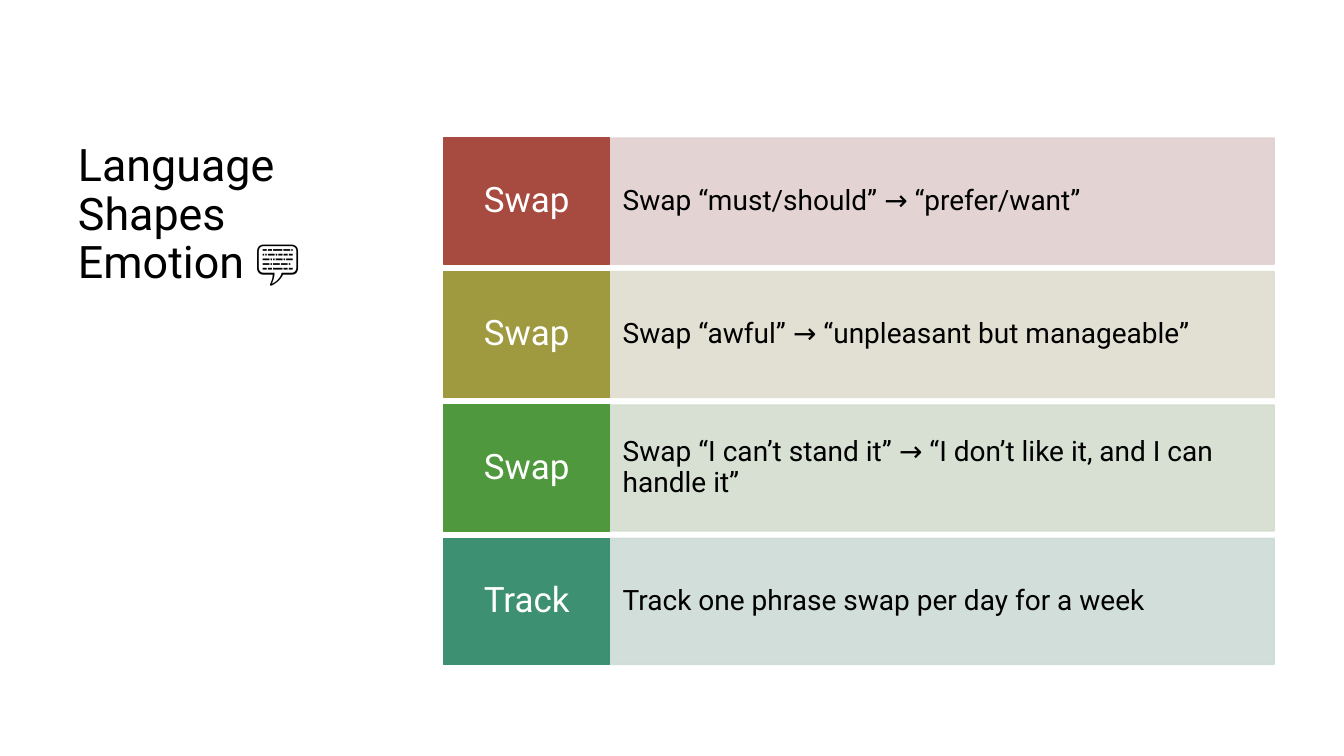
from dataclasses import dataclass

from lxml.etree import SubElement
from pptx import Presentation
from pptx.dml.color import RGBColor
from pptx.enum.shapes import MSO_SHAPE
from pptx.enum.text import MSO_ANCHOR, MSO_AUTO_SIZE, PP_ALIGN
from pptx.oxml.ns import qn
from pptx.shapes.autoshape import Shape
from pptx.slide import Slide
from pptx.util import Pt

BLACK = RGBColor(0x00, 0x00, 0x00)
WHITE = RGBColor(0xFF, 0xFF, 0xFF)
RED = RGBColor(0xA7, 0x4B, 0x40)
PALE_RED = RGBColor(0xE1, 0xD0, 0xCF)
OLIVE = RGBColor(0x9F, 0x9A, 0x3F)
PALE_OLIVE = RGBColor(0xDF, 0xDD, 0xCF)
GREEN = RGBColor(0x50, 0x98, 0x3E)
PALE_GREEN = RGBColor(0xD3, 0xDD, 0xCE)
TEAL = RGBColor(0x3D, 0x90, 0x72)
PALE_TEAL = RGBColor(0xCE, 0xDB, 0xD5)

FONT = "Roboto"
TOP = 98.64
ROW_HEIGHT = 90
ROW_PITCH = 95.3
LABEL_LEFT, LABEL_WIDTH = 316.8, 118.8
DETAIL_LEFT, DETAIL_WIDTH = LABEL_LEFT + LABEL_WIDTH, 474.5


@dataclass(frozen=True)
class Row:
    label: str
    detail: str
    strong: RGBColor
    pale: RGBColor


ROWS = [
    Row("Swap", "Swap “must/should” → “prefer/want”", RED, PALE_RED),
    Row("Swap", "Swap “awful” → “unpleasant but manageable”", OLIVE, PALE_OLIVE),
    Row("Swap", "Swap “I can’t stand it” → “I don’t like it, and I can handle it”",
        GREEN, PALE_GREEN),
    Row("Track", "Track one phrase swap per day for a week", TEAL, PALE_TEAL),
]


def write_text(box: Shape, text: str, *, size: float, color: RGBColor,
               align: PP_ALIGN = PP_ALIGN.LEFT,
               anchor: MSO_ANCHOR = MSO_ANCHOR.MIDDLE,
               inset_x: float = 7.2, inset_y: float = 3.6) -> None:
    frame = box.text_frame
    frame.word_wrap = True
    frame.auto_size = MSO_AUTO_SIZE.NONE
    frame.vertical_anchor = anchor
    frame.margin_left = frame.margin_right = Pt(inset_x)
    frame.margin_top = frame.margin_bottom = Pt(inset_y)
    para = frame.paragraphs[0]
    para.alignment = align
    para.line_spacing = 0.9
    span = para.add_run()
    span.text = text
    span.font.name = FONT
    span.font.size = Pt(size)
    span.font.color.rgb = color


def add_block(page: Slide, left: float, top: float, width: float,
              color: RGBColor, opacity: int = 100) -> Shape:
    box = page.shapes.add_shape(MSO_SHAPE.RECTANGLE, Pt(left), Pt(top),
                                Pt(width), Pt(ROW_HEIGHT))
    box.shadow.inherit = False
    box.fill.solid()
    box.fill.fore_color.rgb = color
    box.line.color.rgb = color
    box.line.width = Pt(1)
    if opacity < 100:
        for tint in box.element.spPr.iter(qn("a:srgbClr")):
            SubElement(tint, qn("a:alpha")).set("val", str(opacity * 1000))
    return box


def add_row(page: Slide, row: Row, top: float) -> None:
    detail = add_block(page, DETAIL_LEFT, top, DETAIL_WIDTH, row.pale, opacity=90)
    write_text(detail, row.detail, size=20, color=BLACK, inset_x=9.2, inset_y=22.9)
    label = add_block(page, LABEL_LEFT, top, LABEL_WIDTH, row.strong)
    write_text(label, row.label, size=25, color=WHITE, align=PP_ALIGN.CENTER,
               inset_x=6.3, inset_y=8.9)


def main() -> None:
    deck = Presentation()
    deck.slide_width, deck.slide_height = Pt(960), Pt(540)
    page = deck.slides.add_slide(deck.slide_layouts.get_by_name("Title Only"))
    title = page.shapes.title
    title.left, title.top = Pt(48.5), Pt(TOP)
    title.width, title.height = Pt(229), Pt(376)
    write_text(title, "Language Shapes Emotion 💬", size=32, color=BLACK,
               anchor=MSO_ANCHOR.TOP)
    for index, row in enumerate(ROWS):
        add_row(page, row, TOP + index * ROW_PITCH)
    deck.save("out.pptx")


if __name__ == "__main__":
    main()
